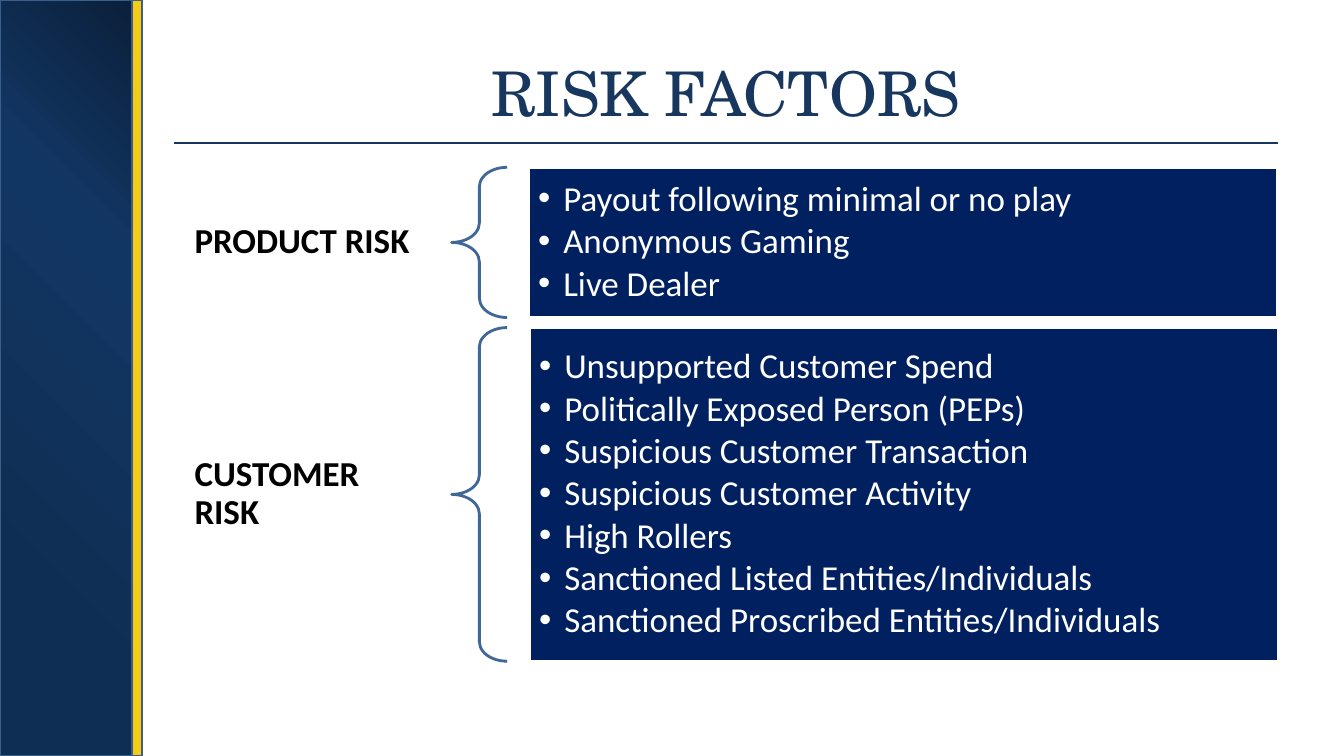
from lxml import etree
from pptx import Presentation
from pptx import util as u
from pptx.dml import color
from pptx.enum import shapes, text
from pptx.oxml import parse_xml
from pptx.oxml.ns import nsdecls, qn

NAVY = color.RGBColor(0x00, 0x20, 0x60)
TITLE_BLUE = color.RGBColor(0x17, 0x37, 0x5E)
EDGE_BLUE = color.RGBColor(0x3A, 0x5F, 0x8C)
BRACE_BLUE = color.RGBColor(0x3F, 0x67, 0x97)
YELLOW = color.RGBColor(0xF6, 0xCB, 0x16)
WHITE = color.RGBColor(0xFF, 0xFF, 0xFF)
BLACK = color.RGBColor(0x00, 0x00, 0x00)
SIDEBAR_STOPS = [
    (0, color.RGBColor(0x0B, 0x20, 0x3B)),
    (29, color.RGBColor(0x12, 0x36, 0x63)),
    (79, color.RGBColor(0x0F, 0x2E, 0x53)),
]

# Label, its top and height, panel left, top and height, panel entries
RISKS = [
    ("PRODUCT RISK", 153.4, 38.9, 377.3, 119.5, 107.3, [
        "Payout following minimal or no play",
        "Anonymous Gaming",
        "Live Dealer",
    ]),
    ("CUSTOMER RISK", 320.4, 65.5, 378, 234, 238.3, [
        "Unsupported Customer Spend",
        "Politically Exposed Person (PEPs)",
        "Suspicious Customer Transaction",
        "Suspicious Customer Activity",
        "High Rollers",
        "Sanctioned Listed Entities/Individuals",
        "Sanctioned Proscribed Entities/Individuals",
    ]),
]


def add_outline(page, kind, place, line, fill=None):
    shape = page.shapes.add_shape(kind, *map(u.Pt, place))
    shape.shadow.inherit = False
    if fill is None:
        shape.fill.background()
    else:
        shape.fill.solid()
        shape.fill.fore_color.rgb = fill
    shape.line.color.rgb = line
    shape.line.width = u.Pt(2)
    return shape


def set_radial_fill(shape, stops):
    """Spread the colours from the top right corner."""
    marks = "".join(
        f'<a:gs pos="{share * 1000}"><a:srgbClr val="{tone}"/></a:gs>'
        for share, tone in stops)
    gradient = parse_xml(
        f'<a:gradFill {nsdecls("a")} rotWithShape="1"><a:gsLst>{marks}</a:gsLst>'
        '<a:path path="circle"><a:fillToRect l="100000" b="100000"/></a:path>'
        '</a:gradFill>')
    properties = shape._element.spPr
    properties.replace(properties.find(qn("a:solidFill")), gradient)


def set_frame(shape, insets):
    frame = shape.text_frame
    frame.word_wrap = True
    frame.vertical_anchor = text.MSO_ANCHOR.MIDDLE
    (frame.margin_left, frame.margin_top,
     frame.margin_right, frame.margin_bottom) = map(u.Pt, insets)
    return frame


def set_font(para, size, name, tone, bold=False):
    for span in para.runs:
        span.font.size = u.Pt(size)
        span.font.name = name
        span.font.color.rgb = tone
        span.font.bold = bold


def add_label(page, place, wording, insets, size, name, tone, bold=False):
    box = page.shapes.add_textbox(*map(u.Pt, place))
    para = set_frame(box, insets).paragraphs[0]
    para.text = wording
    set_font(para, size, name, tone, bold)
    return para


def add_bullet(para):
    properties = para._p.get_or_add_pPr()
    properties.set("marL", str(u.Pt(18)))
    properties.set("indent", str(-u.Pt(18)))
    font = etree.SubElement(properties, qn("a:buFont"))
    font.set("typeface", "Arial")
    etree.SubElement(properties, qn("a:buChar")).set("char", "•")


def add_panel(page, place, entries):
    panel = add_outline(page, shapes.MSO_SHAPE.RECTANGLE, place, WHITE, NAVY)
    frame = set_frame(panel, (7.2, 7.2, 7.2, 7.2))
    for index, entry in enumerate(entries):
        para = frame.add_paragraph() if index else frame.paragraphs[0]
        para.text = entry
        para.alignment = text.PP_ALIGN.LEFT
        para.line_spacing = 0.9
        para.space_after = u.Pt(3.3)
        add_bullet(para)
        set_font(para, 25, "Calibri", WHITE)


def add_brace(page, place):
    brace = add_outline(page, shapes.MSO_SHAPE.LEFT_BRACE, place, BRACE_BLUE)
    brace.adjustments[0] = 0.35
    brace.adjustments[1] = 0.5


def add_rule(page, left, right, top):
    rule = page.shapes.add_connector(
        shapes.MSO_CONNECTOR.STRAIGHT, *map(u.Pt, (left, top, right, top)))
    rule.line.color.rgb = TITLE_BLUE
    rule.line.width = u.Pt(1.5)
    etree.SubElement(rule._element.spPr, qn("a:effectLst"))


def main():
    deck = Presentation()
    deck.slide_width, deck.slide_height = u.Pt(960), u.Pt(540)
    page = deck.slides.add_slide(deck.slide_layouts[6])

    # Side band
    rectangle = shapes.MSO_SHAPE.RECTANGLE
    sidebar = add_outline(page, rectangle, (0, 0, 94.3, 540), EDGE_BLUE, NAVY)
    set_radial_fill(sidebar, SIDEBAR_STOPS)
    add_outline(page, rectangle, (94.3, 0, 7.2, 540), EDGE_BLUE, YELLOW)

    # Title
    title = add_label(page, (124.6, 20.9, 788.4, 90), "RISK FACTORS",
                      (7.2, 3.6, 7.2, 3.6), 44, "TeX Gyre Schola", TITLE_BLUE)
    title.alignment = text.PP_ALIGN.CENTER

    # Risk groups
    for name, label_top, label_height, left, top, height, entries in RISKS:
        label = add_label(page, (125.3, label_top, 196.6, label_height), name,
                          (13.7, 5, 18, 5), 25, "Calibri", BLACK, bold=True)
        label.line_spacing = 0.9
        add_brace(page, (322.6, top, 39.6, height))
        add_panel(page, (left, top, 535, height), entries)

    # Rule under the title
    add_rule(page, 124.6, 913, 102.2)
    deck.save("out.pptx")


if __name__ == "__main__":
    main()
